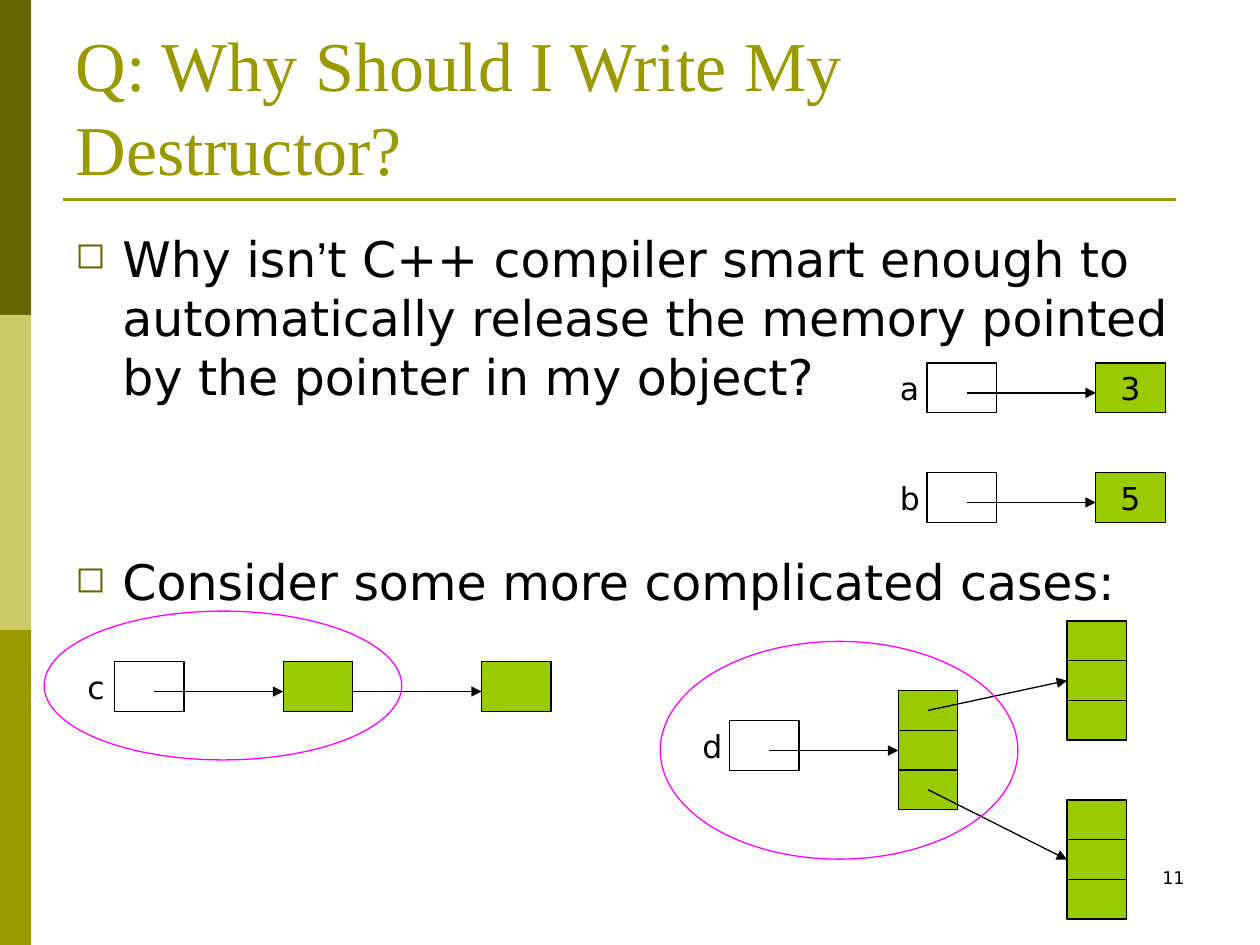
from lxml.etree import SubElement
from pptx import Presentation
from pptx.dml.color import RGBColor
from pptx.enum.shapes import MSO_CONNECTOR, MSO_SHAPE
from pptx.enum.text import MSO_ANCHOR, MSO_AUTO_SIZE, PP_ALIGN
from pptx.oxml.ns import qn
from pptx.util import Cm, Pt

OLIVE, DARK, PALE = "999900", "666600", "CCCC66"
GREEN, PINK, BLACK = "99CC00", "FF00FF", "000000"
CELL_W, CELL_H = 1.4, 1
STACK_W, STACK_H = 1.2, 2.4
START, REACH, DROP = 0.8, 3.4, 0.6


def rgb(value):
    """Turn a hex string into a colour."""
    return RGBColor.from_string(value)


def add_run(p, text, size=18, font="DejaVu Sans", color=BLACK):
    """Add formatted text to a paragraph."""
    r = p.add_run()
    r.text = text
    r.font.size, r.font.name = Pt(size), font
    r.font.color.rgb = rgb(color)


def add_shape(s, kind, x, y, w, h, fill=None, line=BLACK, text=None):
    """Add a flat preset shape with optional centred text."""
    sp = s.shapes.add_shape(kind, Cm(x), Cm(y), Cm(w), Cm(h))
    sp.shadow.inherit = False
    if fill:
        sp.fill.solid()
        sp.fill.fore_color.rgb = rgb(fill)
    else:
        sp.fill.background()
    if line:
        sp.line.color.rgb, sp.line.width = rgb(line), Pt(0.75)
    else:
        sp.line.fill.background()
    if text:
        tf = sp.text_frame
        tf.word_wrap, tf.vertical_anchor = False, MSO_ANCHOR.MIDDLE
        tf.paragraphs[0].alignment = PP_ALIGN.CENTER
        add_run(tf.paragraphs[0], text)


def add_line(s, x1, y1, x2, y2, color=BLACK, width=0.75, arrow=False):
    """Add a straight line, with an arrowhead at its end if wanted."""
    c = s.shapes.add_connector(MSO_CONNECTOR.STRAIGHT, Cm(x1), Cm(y1), Cm(x2), Cm(y2))
    c.line.color.rgb, c.line.width = rgb(color), Pt(width)
    if arrow:
        SubElement(c.line._get_or_add_ln(), qn("a:tailEnd"), type="triangle")
    SubElement(c._element.spPr, qn("a:effectLst"))


def add_box(s, x, y, w, h):
    """Add a wrapping text box and return its text frame."""
    tf = s.shapes.add_textbox(Cm(x), Cm(y), Cm(w), Cm(h)).text_frame
    tf.word_wrap = True
    return tf


def add_bullet(p, parts, before=0):
    """Fill a paragraph with (text, font) parts behind a square bullet."""
    p.space_before, p.line_spacing = Pt(before), Pt(33.7)
    pPr = p._p.get_or_add_pPr()
    pPr.set("marL", str(Cm(0.95)))
    pPr.set("indent", str(-Cm(0.95)))
    SubElement(SubElement(pPr, qn("a:buClr")), qn("a:srgbClr"), val=DARK)
    SubElement(pPr, qn("a:buSzPct"), val="75000")
    SubElement(pPr, qn("a:buChar"), char="◻")
    for text, font in parts:
        add_run(p, text, size=28, font=font)


def add_cell(s, x, y, fill=GREEN, text=None):
    """Add one memory cell."""
    add_shape(s, MSO_SHAPE.RECTANGLE, x, y, CELL_W, CELL_H, fill=fill, text=text)


def add_pointer(s, name, x, y):
    """Add a named pointer cell and its arrow."""
    add_cell(s, x, y, fill=None)
    add_run(add_box(s, x - START, y, 1, 1).paragraphs[0], name)
    add_line(s, x + START, y + DROP, x + REACH, y + DROP, arrow=True)


def add_stack(s, x, y):
    """Add an array of three cells."""
    add_shape(s, MSO_SHAPE.RECTANGLE, x, y, STACK_W, STACK_H, fill=GREEN)
    for i in (1, 2):
        row = y + i * STACK_H / 3
        add_line(s, x, row, x + STACK_W, row)


def add_frame(s):
    """Add the side bar, title rule and slide number."""
    for i, color in enumerate((DARK, PALE, OLIVE)):
        add_shape(s, MSO_SHAPE.RECTANGLE, 0, i * 6.35, 0.63, 6.35, fill=color, line=None)
    add_line(s, 1.27, 4.02, 23.71, 4.02, color=OLIVE, width=1.5)
    p = add_box(s, 18.2, 17.35, 5.93, 1.27).paragraphs[0]
    p.alignment = PP_ALIGN.RIGHT
    add_run(p, "11", size=10)


def add_title(s, text):
    """Place and format the title placeholder."""
    sp = s.shapes.title
    sp.left, sp.top, sp.width, sp.height = Cm(1.27), Cm(0.76), Cm(22.86), Cm(3.18)
    tf = sp.text_frame
    tf.auto_size, tf.vertical_anchor = MSO_AUTO_SIZE.NONE, MSO_ANCHOR.BOTTOM
    p = tf.paragraphs[0]
    p.alignment, p.line_spacing = PP_ALIGN.LEFT, Pt(48)
    add_run(p, text, size=40, font="Times New Roman", color=OLIVE)


def add_body(s):
    """Add the two bullet points."""
    tf = add_box(s, 1.27, 4.47, 22.86, 12.57)
    sans = "DejaVu Sans"
    add_bullet(tf.paragraphs[0], [
        ("Why isn", sans), ("’", "Arial"),
        ("t C++ compiler smart enough to automatically release the memory "
         "pointed by the pointer in my object?", sans)])
    add_bullet(tf.add_paragraph(),
               [("Consider some more complicated cases:", sans)], before=84)


def add_simple_cases(s):
    """Draw pointers a and b with their values."""
    x = 18.69
    for name, value, y in (("a", "3", 7.32), ("b", "5", 9.53)):
        add_cell(s, x + REACH, y, text=value)
        add_pointer(s, name, x, y)


def add_chain_case(s):
    """Draw pointer c, which leads through one cell to another."""
    x, y = 2.31, 13.34
    far = x + REACH + 4
    add_cell(s, x + REACH, y)
    add_pointer(s, "c", x, y)
    add_cell(s, far, y)
    add_line(s, x + REACH + CELL_W, y + DROP, far, y + DROP, arrow=True)
    add_shape(s, MSO_SHAPE.OVAL, 0.89, 12.32, 7.21, 3, line=PINK)


def add_array_case(s):
    """Draw pointer d, whose array leads to two more arrays."""
    x, y, far = 18.11, 13.92, 21.51
    add_stack(s, x, y)
    add_pointer(s, "d", x - REACH, 14.53)
    for row, top in ((0, 12.52), (2, 16.13)):
        add_stack(s, far, top)
        add_line(s, x + STACK_W / 2, y + (row + 0.5) * STACK_H / 3,
                 far, top + STACK_H / 2, arrow=True)
    add_shape(s, MSO_SHAPE.OVAL, 13.31, 12.93, 7.21, 4.39, line=PINK)


def main():
    """Build and save the slide."""
    prs = Presentation()
    prs.slide_width, prs.slide_height = Cm(25.4), Cm(19.05)
    s = prs.slides.add_slide(prs.slide_layouts[5])
    add_frame(s)
    add_title(s, "Q: Why Should I Write My Destructor?")
    add_body(s)
    add_simple_cases(s)
    add_chain_case(s)
    add_array_case(s)
    prs.save("out.pptx")


if __name__ == "__main__":
    main()
